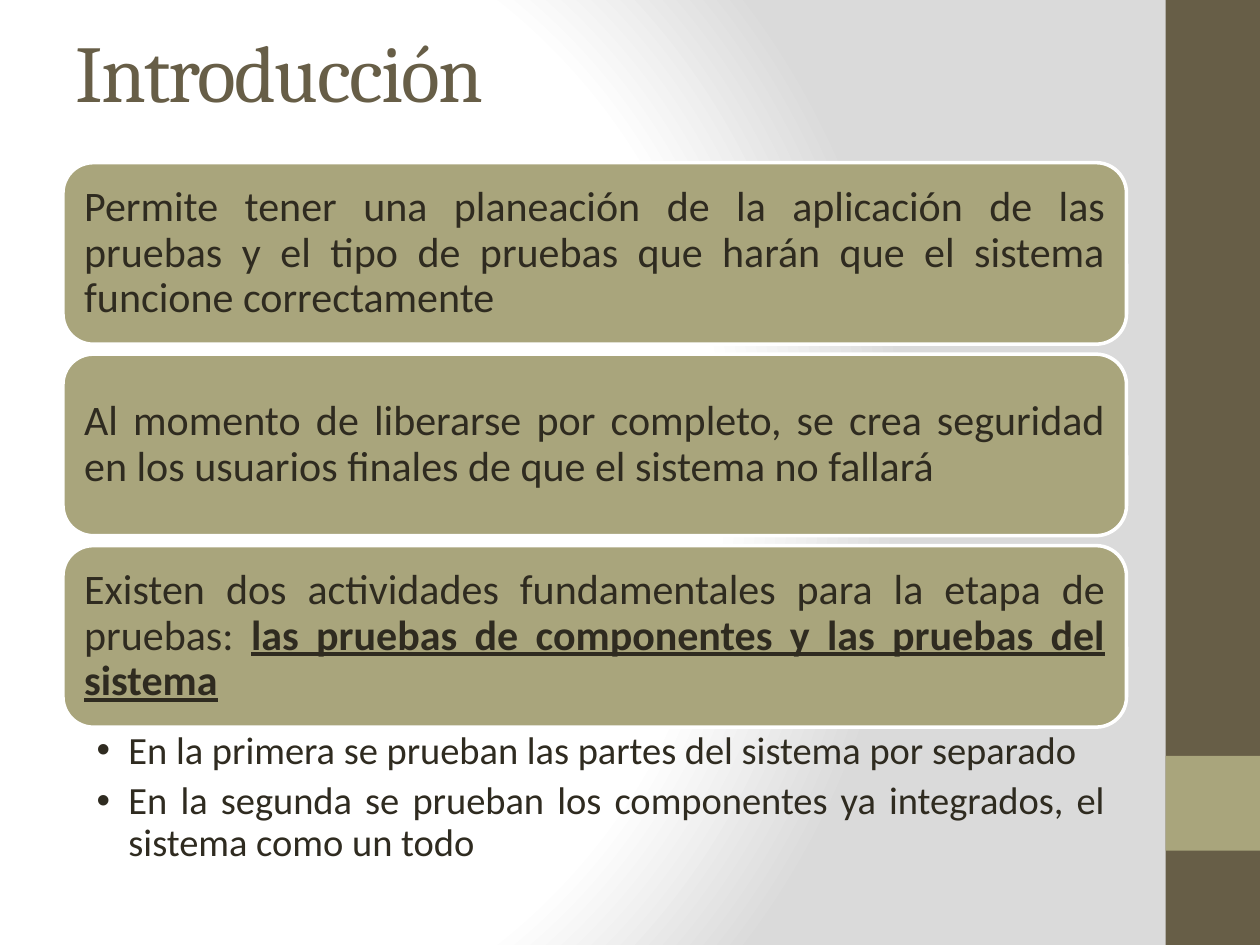
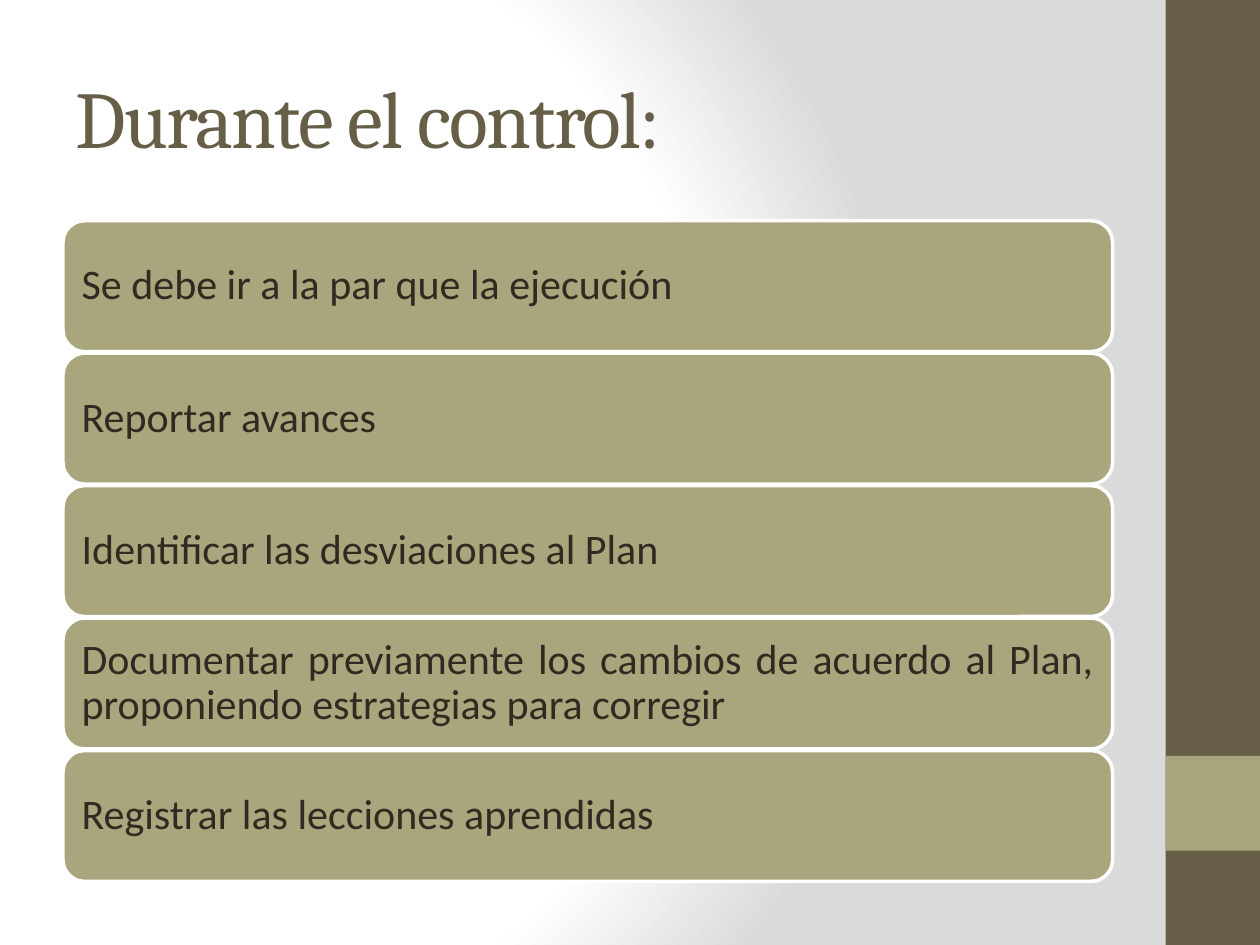
from dataclasses import dataclass

from pptx import Presentation
from pptx.dml.color import RGBColor
from pptx.enum.shapes import MSO_SHAPE
from pptx.enum.text import MSO_ANCHOR, MSO_AUTO_SIZE, PP_ALIGN
from pptx.oxml import parse_xml
from pptx.oxml.ns import nsdecls, qn
from pptx.oxml.xmlchemy import OxmlElement
from pptx.util import Cm, Pt


@dataclass(frozen=True)
class Theme:
    brown: str = "675E47"
    olive: str = "A9A57C"
    ink: str = "2F2B20"
    white: str = "FFFFFF"
    grey: str = "DADADA"
    title_font: str = "Cambria"
    body_font: str = "Calibri"
    title_size: int = 46
    card_size: int = 24
    bullet_size: int = 22


THEME = Theme()
TITLE_ONLY, TITLE_AND_BODY = 5, 1
LEFT = 1.27
INSET = 0.25

INTRO_CARDS = [
    [("Permite tener una planeación de la aplicación de las pruebas y el tipo "
      "de pruebas que harán que el sistema funcione correctamente", False)],
    [("Al momento de liberarse por completo, se crea seguridad en los usuarios "
      "finales de que el sistema no fallará", False)],
    [("Existen dos actividades fundamentales para la etapa de pruebas: ", False),
     ("las pruebas de componentes y las pruebas del sistema", True)],
]
INTRO_BULLETS = [
    "En la primera se prueban las partes del sistema por separado",
    "En la segunda se prueban los componentes ya integrados, el sistema como un todo",
]
CONTROL_CARDS = [
    [(text, False)] for text in (
        "Se debe ir a la par que la ejecución",
        "Reportar avances",
        "Identificar las desviaciones al Plan",
        "Documentar previamente los cambios de acuerdo al Plan, "
        "proponiendo estrategias para corregir",
        "Registrar las lecciones aprendidas",
    )
]


def place(shape, left, top, width, height):
    shape.left, shape.top = Cm(left), Cm(top)
    shape.width, shape.height = Cm(width), Cm(height)


def set_font(para, name, size, color):
    para.font.name = name
    para.font.size = Pt(size)
    para.font.color.rgb = RGBColor.from_string(color)


def set_margins(frame, left, top, right, bottom):
    frame.margin_left, frame.margin_top = Cm(left), Cm(top)
    frame.margin_right, frame.margin_bottom = Cm(right), Cm(bottom)


def add_box(page, preset, left, top, width, height, fill):
    box = page.shapes.add_shape(preset, Cm(left), Cm(top), Cm(width), Cm(height))
    box.shadow.inherit = False
    box.fill.solid()
    box.fill.fore_color.rgb = RGBColor.from_string(fill)
    box.line.fill.background()
    return box


def style_background(master):
    """Give the master a round gradient from white to grey."""
    master.background.fill.gradient()
    properties = master.element.cSld.bg.bgPr
    stops = "".join(
        f'<a:gs pos="{position * 1000}"><a:srgbClr val="{color}"/></a:gs>'
        for position, color in ((0, THEME.white), (75, THEME.white), (100, THEME.grey))
    )
    gradient = parse_xml(
        f'<a:gradFill {nsdecls("a")} rotWithShape="1"><a:gsLst>{stops}</a:gsLst>'
        '<a:path path="circle">'
        '<a:fillToRect l="20000" t="50000" r="100000" b="50000"/>'
        "</a:path></a:gradFill>"
    )
    properties.replace(properties.find(qn("a:gradFill")), gradient)


def add_side_bands(master, page):
    """Draw the bands on a page, then move them to the master all pages share."""
    bands = [(0, 19.05, THEME.brown), (15.24, 1.91, THEME.olive)]
    for number, (top, height, color) in enumerate(bands, start=100):
        band = add_box(page, MSO_SHAPE.RECTANGLE, 23.5, top, 1.9, height, color)
        band.element.nvSpPr.cNvPr.set("id", str(number))
        master.element.cSld.spTree.append(band.element)


def set_title(page, text, top, height):
    title = page.shapes.title
    place(title, LEFT, top, 21.16, height)
    frame = title.text_frame
    frame.text = text
    frame.auto_size = MSO_AUTO_SIZE.NONE
    frame.vertical_anchor = MSO_ANCHOR.MIDDLE
    para = frame.paragraphs[0]
    para.alignment = PP_ALIGN.LEFT
    set_font(para, THEME.title_font, THEME.title_size, THEME.brown)
    para._p.pPr.find(qn("a:defRPr")).set("spc", "-100")


def add_card(page, spans, top, width, height):
    card = add_box(page, MSO_SHAPE.ROUNDED_RECTANGLE, LEFT, top, width, height, THEME.olive)
    card.line.color.rgb = RGBColor.from_string(THEME.white)
    card.line.width = Pt(2)
    frame = card.text_frame
    frame.word_wrap = True
    frame.vertical_anchor = MSO_ANCHOR.MIDDLE
    set_margins(frame, INSET, INSET, INSET, INSET)
    para = frame.paragraphs[0]
    para.alignment = PP_ALIGN.JUSTIFY
    para.line_spacing = 0.9
    set_font(para, THEME.body_font, THEME.card_size, THEME.ink)
    for text, emphasised in spans:
        span = para.add_run()
        span.text = text
        if emphasised:
            span.font.bold = span.font.underline = True


def add_card_stack(page, cards, top, width, height, pitch):
    for index, spans in enumerate(cards):
        add_card(page, spans, top + index * pitch, width, height)


def set_bullets(page, items, top, width, height):
    body = page.placeholders[1]
    place(body, LEFT, top, width, height)
    frame = body.text_frame
    frame.auto_size = MSO_AUTO_SIZE.NONE
    frame.vertical_anchor = MSO_ANCHOR.TOP
    set_margins(frame, 0.68, 0.08, 0.43, 0.08)
    frame.text = "\n".join(items)
    for para in frame.paragraphs:
        para.level = 1
        properties = para._p.get_or_add_pPr()
        properties.set("marL", str(Cm(0.64)))
        properties.set("indent", str(-Cm(0.64)))
        bullet = OxmlElement("a:buChar")
        bullet.set("char", "•")
        properties.append(bullet)
        para.alignment = PP_ALIGN.JUSTIFY
        para.line_spacing = 0.9
        para.space_before = Pt(0)
        para.space_after = Pt(5)
        set_font(para, THEME.body_font, THEME.bullet_size, THEME.ink)


def main():
    deck = Presentation()
    deck.slide_width, deck.slide_height = Cm(25.4), Cm(19.05)
    intro = deck.slides.add_slide(deck.slide_layouts[TITLE_AND_BODY])
    control = deck.slides.add_slide(deck.slide_layouts[TITLE_ONLY])
    style_background(deck.slide_master)
    add_side_bands(deck.slide_master, intro)

    set_title(intro, "Introducción", top=0.13, height=2.57)
    add_card_stack(intro, INTRO_CARDS, top=3.28, width=21.44, height=3.66, pitch=3.86)
    set_bullets(intro, INTRO_BULLETS, top=14.66, width=21.44, height=2.97)

    set_title(control, "Durante el control:", top=0.76, height=3.18)
    add_card_stack(control, CONTROL_CARDS, top=4.45, width=21.16, height=2.64, pitch=2.67)

    deck.save("out.pptx")


if __name__ == "__main__":
    main()
